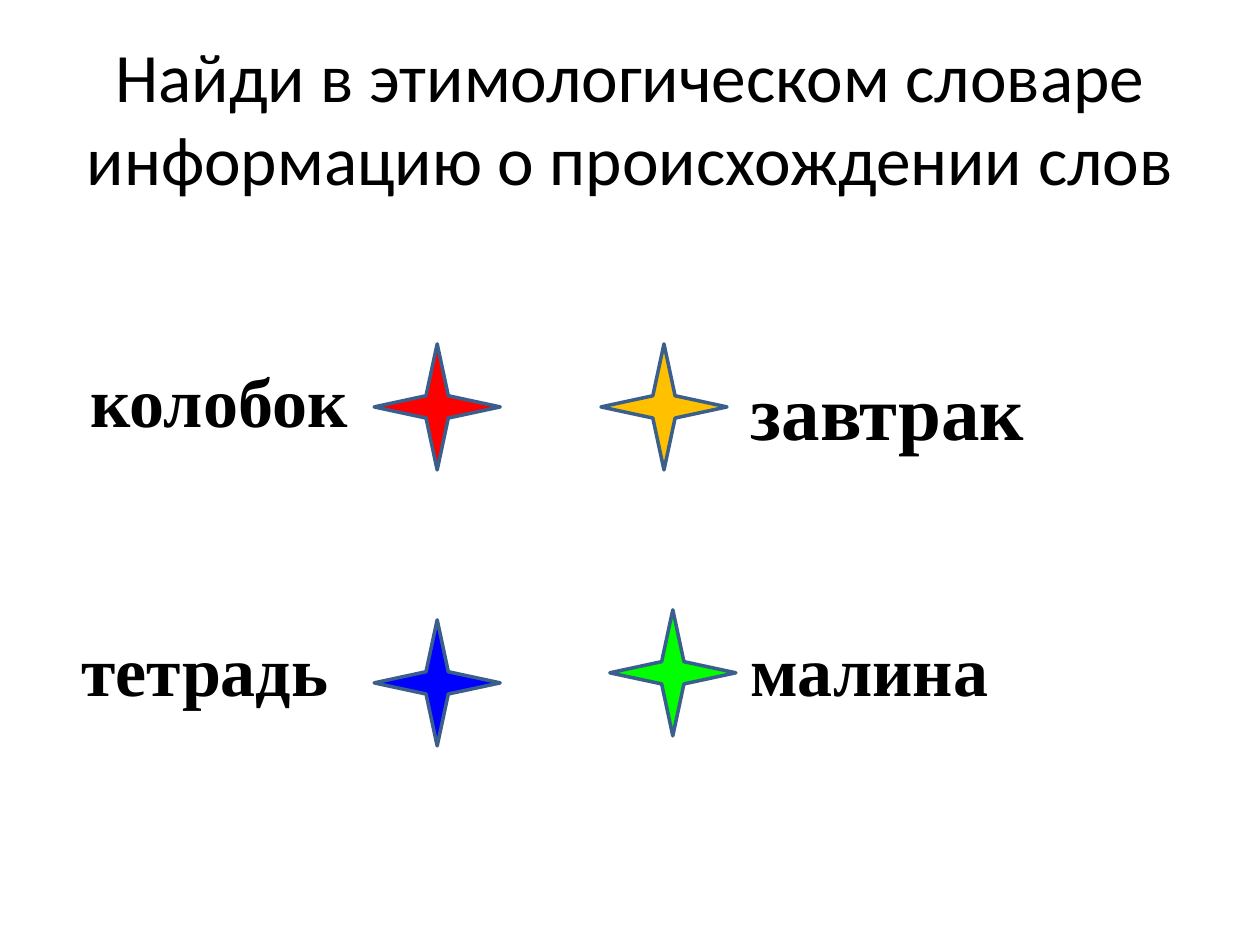
"""Build a slide that asks pupils to look up the origin of four words."""
from dataclasses import dataclass

from pptx import Presentation
from pptx.dml.color import RGBColor
from pptx.enum.shapes import MSO_SHAPE
from pptx.enum.text import MSO_ANCHOR, PP_ALIGN
from pptx.util import Inches, Pt

STAR = MSO_SHAPE.STAR_4_POINT
TOP, MIDDLE, BOTTOM = MSO_ANCHOR.TOP, MSO_ANCHOR.MIDDLE, MSO_ANCHOR.BOTTOM
LEFT, CENTER = PP_ALIGN.LEFT, PP_ALIGN.CENTER


@dataclass(frozen=True)
class Theme:
    text: str = "000000"
    outline: str = "3A5F8C"
    red: str = "FF0000"
    blue: str = "0000FF"
    green: str = "00FF00"
    amber: str = "FFC000"
    title_font: str = "Calibri"
    word_font: str = "Times New Roman"
    title_size: float = 39.6
    word_size: float = 40
    large_word_size: float = 44
    outline_width: float = 2
    star_size: float = 1


@dataclass(frozen=True)
class Label:
    text: str
    left: float
    top: float
    width: float
    height: float
    size: float
    anchor: MSO_ANCHOR
    font: str
    bold: bool = True
    align: PP_ALIGN = LEFT


@dataclass(frozen=True)
class Star:
    left: float
    top: float
    color: str


THEME = Theme()
WORD = THEME.word_font
LABELS = (
    Label("Найди в этимологическом словаре информацию о происхождении слов",
          0.5, 0.3, 9, 1.25, THEME.title_size, MIDDLE, THEME.title_font, False, CENTER),
    Label("колобок", 0.62, 2.73, 2.94, 0.82, THEME.word_size, BOTTOM, WORD),
    Label("тетрадь", 0.55, 4.92, 2.7, 0.78, THEME.word_size, TOP, WORD),
    Label("завтрак", 5.86, 2.97, 2.58, 0.7, THEME.large_word_size, BOTTOM, WORD),
    Label("малина", 5.86, 4.92, 3.25, 1.15, THEME.word_size, TOP, WORD),
)
STARS = (
    Star(2.97, 2.73, THEME.red),
    Star(2.97, 4.92, THEME.blue),
    Star(4.84, 4.84, THEME.green),
    Star(4.77, 2.73, THEME.amber),
)


def add_label(s, label: Label) -> None:
    sp = s.shapes.add_textbox(Inches(label.left), Inches(label.top),
                              Inches(label.width), Inches(label.height))
    tf = sp.text_frame
    tf.word_wrap = True
    tf.vertical_anchor = label.anchor
    p = tf.paragraphs[0]
    p.alignment = label.align
    r = p.add_run()
    r.text = label.text
    r.font.name = label.font
    r.font.size = Pt(label.size)
    r.font.bold = label.bold
    r.font.color.rgb = RGBColor.from_string(THEME.text)


def add_star(s, star: Star) -> None:
    size = Inches(THEME.star_size)
    sp = s.shapes.add_shape(STAR, Inches(star.left), Inches(star.top), size, size)
    sp.shadow.inherit = False
    sp.fill.solid()
    sp.fill.fore_color.rgb = RGBColor.from_string(star.color)
    sp.line.color.rgb = RGBColor.from_string(THEME.outline)
    sp.line.width = Pt(THEME.outline_width)


def main() -> None:
    prs = Presentation()
    prs.slide_width, prs.slide_height = Inches(10), Inches(7.5)
    s = prs.slides.add_slide(prs.slide_layouts[6])
    for label in LABELS:
        add_label(s, label)
    for star in STARS:
        add_star(s, star)
    prs.save("out.pptx")


if __name__ == "__main__":
    main()
